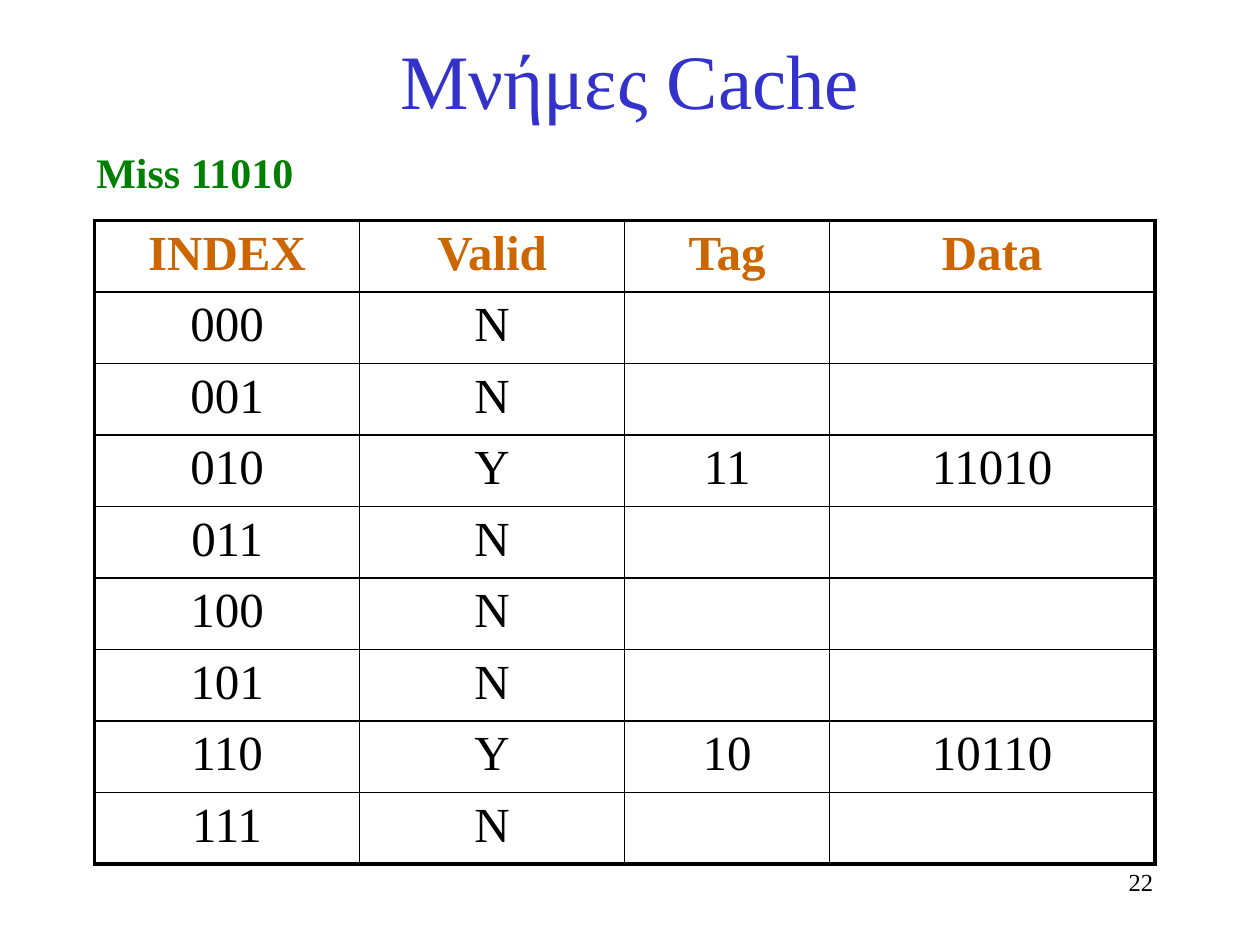
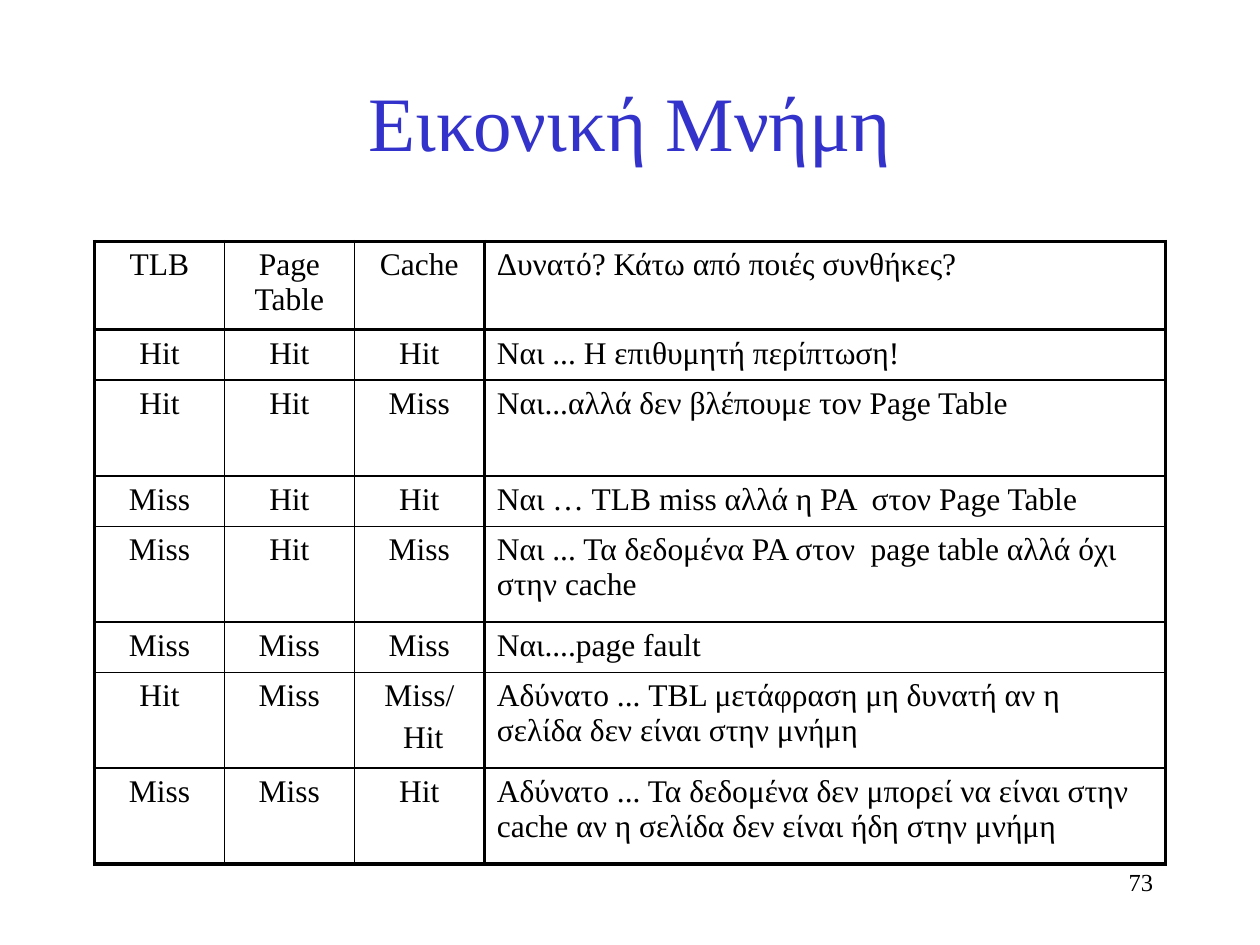
from lxml import etree
from pptx import Presentation
from pptx import util as u
from pptx.dml.color import RGBColor
from pptx.enum import text
from pptx.oxml import ns

COLORS = {"title": "3333CC", "body": "000000", "access": "008000", "header": "CC6600"}
FONT = "Times New Roman"
THIN, HEAVY = 1, 2.25
LEFT, CENTER, RIGHT = text.PP_ALIGN.LEFT, text.PP_ALIGN.CENTER, text.PP_ALIGN.RIGHT

CACHE_HEADINGS = ["INDEX", "Valid", "Tag", "Data"]
CACHE_FILLED = {"010": ("11", "11010"), "110": ("10", "10110")}
LOOKUP_ROWS = [
    ("TLB", "Page Table", "Cache", "Δυνατό? Κάτω από ποιές συνθήκες?"),
    ("Hit", "Hit", "Hit", "Ναι ... Η επιθυμητή περίπτωση!"),
    ("Hit", "Hit", "Miss", "Ναι...αλλά δεν βλέπουμε τον Page Table"),
    ("Miss", "Hit", "Hit", "Ναι … TLB miss αλλά η PA  στον Page Table"),
    ("Miss", "Hit", "Miss", "Ναι ... Τα δεδομένα PA στον  page table αλλά όχι στην cache"),
    ("Miss", "Miss", "Miss", "Ναι....page fault"),
    ("Hit", "Miss", "Miss/\n Hit",
     "Αδύνατο ... TBL μετάφραση μη δυνατή αν η σελίδα δεν είναι στην μνήμη"),
    ("Miss", "Miss", "Hit",
     "Αδύνατο ... Τα δεδομένα δεν μπορεί να είναι στην cache αν η σελίδα δεν είναι ήδη στην μνήμη"),
]


def write(frame, wording, size, color="body", align=LEFT, bold=False):
    """Write each line of the wording as a paragraph with one run."""
    for number, line in enumerate(wording.split("\n")):
        paragraph = frame.add_paragraph() if number else frame.paragraphs[0]
        paragraph.alignment = align
        if number:
            paragraph.space_before = u.Pt(0.2 * size)
        run = paragraph.add_run()
        run.text = line
        run.font.name = FONT
        run.font.size = u.Pt(size)
        run.font.bold = bold
        run.font.color.rgb = RGBColor.from_string(COLORS[color])


def add_label(slide, box, wording, size, wrap=True, anchor=text.MSO_ANCHOR.TOP, **style):
    """Add a text box at (left, top, width, height) in points."""
    frame = slide.shapes.add_textbox(*map(u.Pt, box)).text_frame
    frame.word_wrap = wrap
    frame.vertical_anchor = anchor
    write(frame, wording, size, **style)


def add_page(deck, title, title_top, number):
    """Add a slide with its title and page number."""
    slide = deck.slides.add_slide(deck.slide_layouts[6])
    add_label(slide, (516, 492, 150, 36), number, 14, align=RIGHT)
    add_label(slide, (54, title_top, 612, 90), title, 44, color="title",
              align=CENTER, anchor=text.MSO_ANCHOR.MIDDLE)
    return slide


def set_border(cell, side, weight):
    """Draw one solid border of a cell."""
    line = etree.SubElement(cell._tc.get_or_add_tcPr(), ns.qn(f"a:ln{side}"),
                            w=str(u.Pt(weight)))
    fill = etree.SubElement(line, ns.qn("a:solidFill"))
    etree.SubElement(fill, ns.qn("a:srgbClr"), val=COLORS["body"])


def add_grid(slide, top, widths, heights, heavy_rows, heavy_columns):
    """Add an unfilled ruled table, heavy at its outline and the given inner edges."""
    grid = slide.shapes.add_table(len(heights), len(widths), u.Pt(54), u.Pt(top),
                                  u.Pt(sum(widths)), u.Pt(sum(heights))).table
    grid.first_row = grid.horz_banding = False
    for column, width in zip(grid.columns, widths):
        column.width = u.Pt(width)
    for row, height in zip(grid.rows, heights):
        row.height = u.Pt(height)
    heavy_rows = {0, len(heights)} | heavy_rows
    heavy_columns = {0, len(widths)} | heavy_columns
    for r in range(len(heights)):
        for c in range(len(widths)):
            cell = grid.cell(r, c)
            for side, edge, heavy in (("L", c, heavy_columns), ("R", c + 1, heavy_columns),
                                      ("T", r, heavy_rows), ("B", r + 1, heavy_rows)):
                set_border(cell, side, HEAVY if edge in heavy else THIN)
            cell.fill.background()
    return grid


def add_cache_slide(deck):
    """Show the cache contents after a miss on 11010."""
    slide = add_page(deck, "Μνήμες Cache", 0, "22")
    add_label(slide, (48, 80, 128, 36), "Miss 11010", 24, wrap=False,
              color="access", bold=True)
    grid = add_grid(slide, 126, [151.5, 151.5, 117, 186], [40.8] * 9, set(), set())
    for c, heading in enumerate(CACHE_HEADINGS):
        write(grid.cell(0, c).text_frame, heading, 28, "header", CENTER, True)
    for block in range(8):
        index = f"{block:03b}"
        stored = CACHE_FILLED.get(index, ())
        for c, value in enumerate((index, "Y" if stored else "N", *stored)):
            write(grid.cell(block + 1, c).text_frame, value, 28, align=CENTER)


def add_virtual_memory_slide(deck):
    """Show which TLB, page table and cache outcomes can occur together."""
    slide = add_page(deck, "Εικονική Μνήμη", 24, "73")
    single, double = 28.8, 54.7
    heights = [50.4, single, double, single, double, single, double, double]
    grid = add_grid(slide, 138, [74.25] * 3 + [389.25], heights, {1}, {3})
    for r, outcomes in enumerate(LOOKUP_ROWS):
        for c, wording in enumerate(outcomes):
            write(grid.cell(r, c).text_frame, wording, 18, align=CENTER if c < 3 else LEFT)


def main():
    """Build and save the slides."""
    deck = Presentation()
    deck.slide_width, deck.slide_height = u.Pt(720), u.Pt(540)
    add_cache_slide(deck)
    add_virtual_memory_slide(deck)
    deck.save("out.pptx")


if __name__ == "__main__":
    main()
